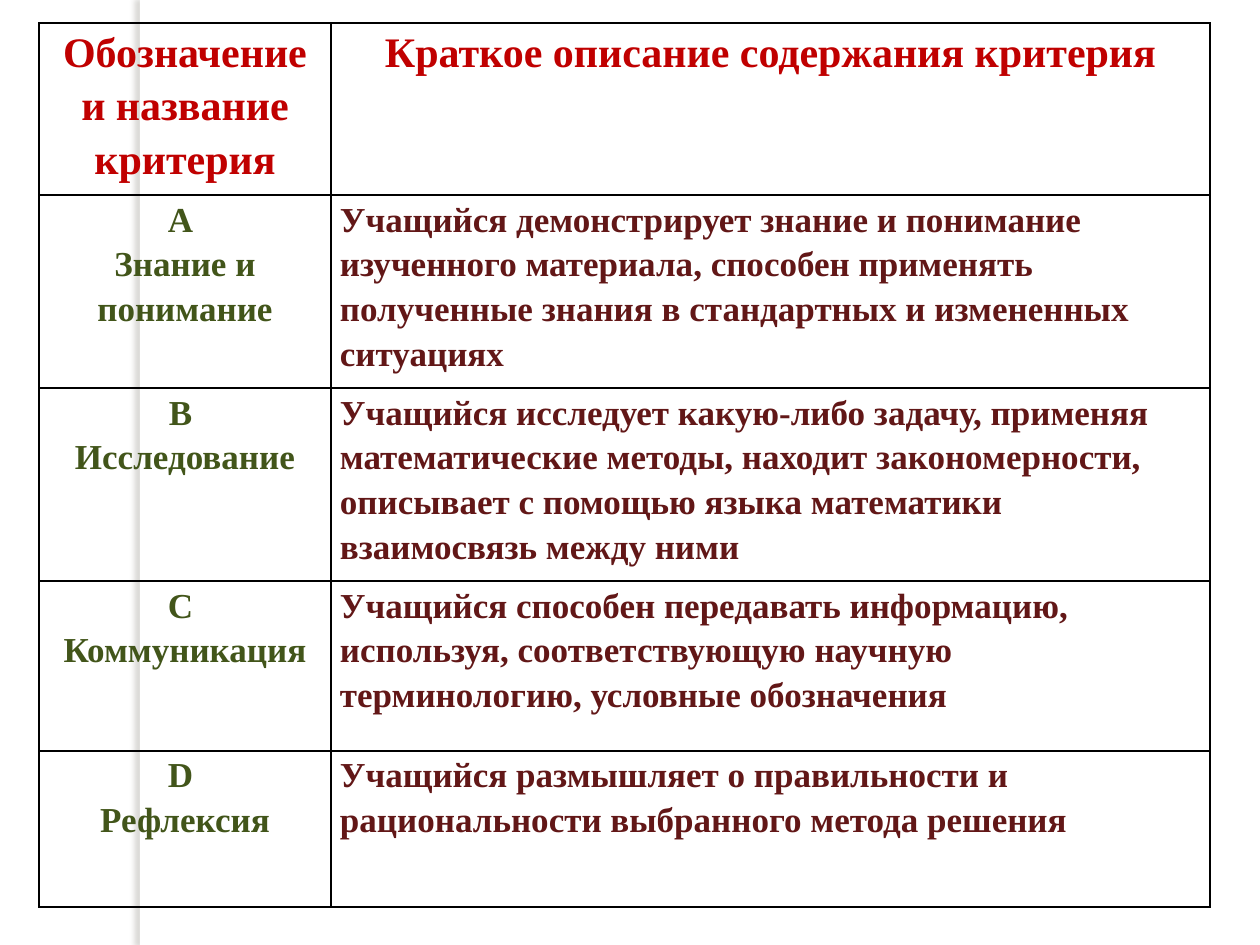
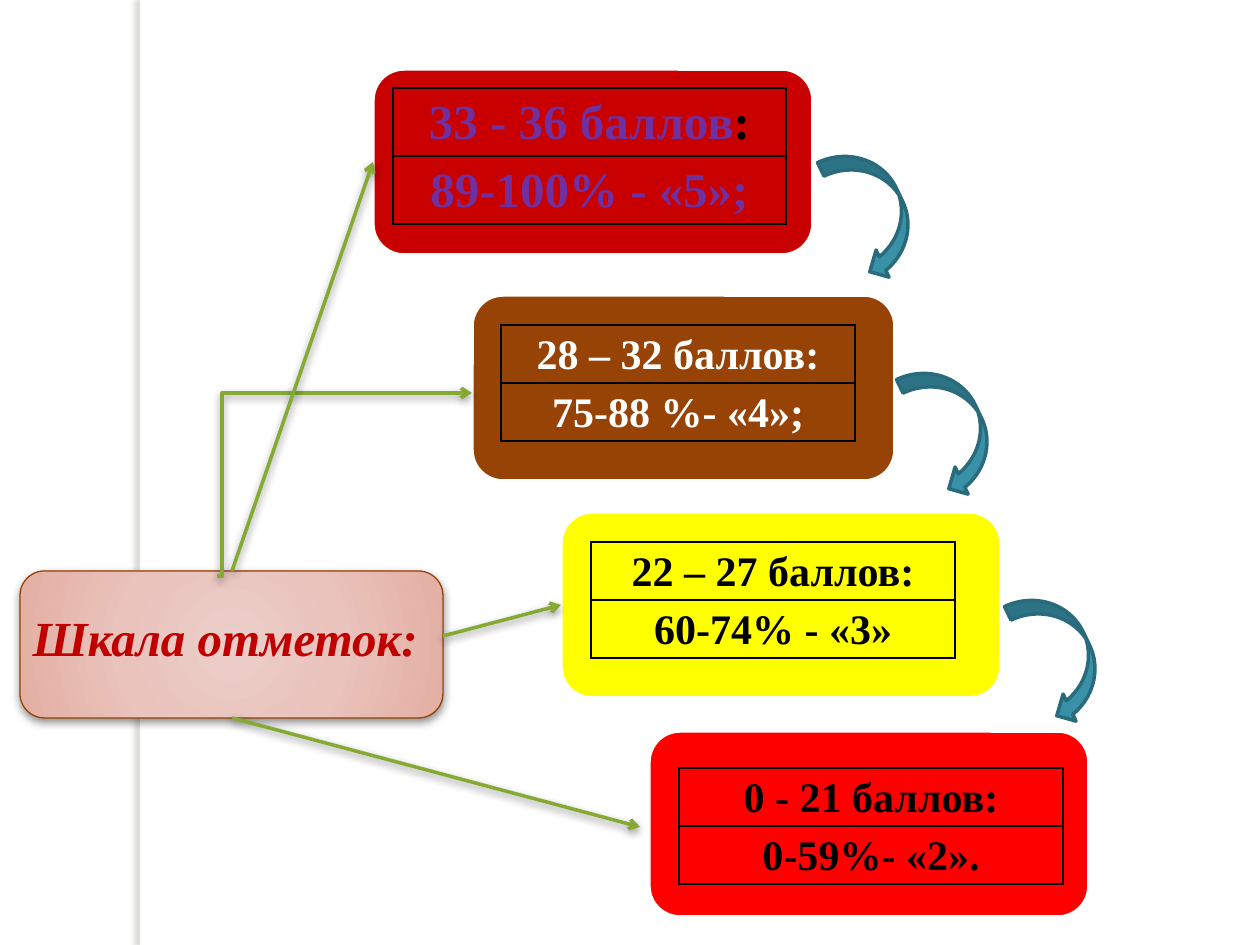
"""Build two slides: assessment criteria and the marking scale."""
from pptx import Presentation
from pptx import util as u
from pptx.dml import color
from pptx.enum import shapes, text
from pptx.oxml import parse_xml
from pptx.oxml.ns import nsdecls

PX = 7257
FONT = "Times New Roman"
CRIMSON, GREEN, MAROON = "C00000", "42551A", "621717"
WHITE, BLACK, VIOLET, BROWN = "FFFFFF", "000000", "7030A0", "964305"
TEAL, DARK_TEAL, ARROW_GREEN = "3891A7", "296B7C", "84AA33"
LEFT, CENTER = text.PP_ALIGN.LEFT, text.PP_ALIGN.CENTER
ROUNDED = shapes.MSO_SHAPE.ROUNDED_RECTANGLE
SOFT_DROP = (BLACK, 43, 5, 2, 90)


def paint(target, value):
    target.rgb = color.RGBColor.from_string(value)


def write(frame, *runs, size, align=CENTER, spacing=1.15, italic=False):
    paragraph = frame.paragraphs[0]
    paragraph.alignment, paragraph.line_spacing = align, spacing
    for words, tint in runs:
        for index, line in enumerate(words.split("\n")):
            if index:
                paragraph.add_line_break()
            run = paragraph.add_run()
            run.text = line
            run.font.name, run.font.size = FONT, u.Pt(size)
            run.font.bold, run.font.italic = True, italic
            paint(run.font.color, tint)


prs = Presentation()
prs.slide_width, prs.slide_height = u.Inches(10), u.Inches(7.5)
criteria = prs.slides.add_slide(prs.slide_layouts[6])
scale = prs.slides.add_slide(prs.slide_layouts[5])
shadowed = []

side_band = criteria.shapes.add_shape(shapes.MSO_SHAPE.RECTANGLE, 140 * PX, 0, 10 * PX, 945 * PX)
side_band.fill.solid()
paint(side_band.fill.fore_color, WHITE)
side_band.line.fill.background()
side_band.element.nvSpPr.cNvPr.set("id", "90")
prs.slide_master.shapes.element.insert(2, side_band.element)
shadowed.append((side_band, ("736F63", 25, 3, 3, 180)))

heading_box = scale.shapes.add_shape(ROUNDED, 20 * PX, 571 * PX, 423 * PX, 147 * PX)
stops = [(0, "ECCEC9"), (50, "E9C3BC"), (97, "E4AFA4"), (100, "E4A89B")]
stop_xml = "".join(f'<a:gs pos="{pos * 1000}"><a:srgbClr val="{tint}"/></a:gs>' for pos, tint in stops)
heading_box.element.spPr.prstGeom.addnext(parse_xml(
    f'<a:gradFill {nsdecls("a")} rotWithShape="1"><a:gsLst>{stop_xml}</a:gsLst><a:path path="circle">'
    '<a:fillToRect l="50000" t="50000" r="50000" b="50000"/></a:path></a:gradFill>'))
paint(heading_box.line.color, BROWN)
heading_box.line.width = u.Pt(0.75)
shadowed.append((heading_box, SOFT_DROP))

heading = scale.shapes.title
heading.left, heading.top, heading.width, heading.height = 20 * PX, 601 * PX, 423 * PX, 72 * PX
heading.text_frame.word_wrap = True
heading.text_frame.vertical_anchor = text.MSO_ANCHOR.MIDDLE
write(heading.text_frame, ("Шкала отметок:", CRIMSON), size=28, align=LEFT, spacing=1.0, italic=True)
scale.shapes.element.append(heading.element)

grade_boxes = [(373, 69, 440, "C80000"), (472, 295, 423, BROWN),
               (561, 512, 440, "FFFF00"), (649, 731, 440, "FF0000")]
step_arrows = [(806, 181), (885, 398), (993, 625)]
solids = [(ROUNDED, x, y, w, 186, fill, WHITE, 0) for x, y, w, fill in grade_boxes]
solids += [(shapes.MSO_SHAPE.CURVED_DOWN_ARROW, x, y, 136, 60, TEAL, DARK_TEAL, 64.4)
           for x, y in step_arrows]
for kind, x, y, w, h, fill, edge, turn in solids:
    solid = scale.shapes.add_shape(kind, x * PX, y * PX, w * PX, h * PX)
    solid.shadow.inherit = False
    solid.rotation = turn
    solid.fill.solid()
    paint(solid.fill.fore_color, fill)
    paint(solid.line.color, edge)
    solid.line.width = u.Pt(2)

STRAIGHT, ELBOW = shapes.MSO_CONNECTOR.STRAIGHT, shapes.MSO_CONNECTOR.ELBOW
for kind, *ends in [(ELBOW, 217, 576, 472, 393), (STRAIGHT, 232, 571, 373, 162),
                    (STRAIGHT, 232, 718, 640, 827), (STRAIGHT, 443, 636, 561, 605)]:
    link = scale.shapes.add_connector(kind, *(end * PX for end in ends))
    paint(link.line.color, ARROW_GREEN)
    link.line.width = u.Pt(2)
    link.line._get_or_add_ln().append(parse_xml(f'<a:tailEnd {nsdecls("a")} type="arrow"/>'))
    if kind == ELBOW:
        guides = link.element.spPr.prstGeom.get_or_add_avLst()
        guides.append(parse_xml(f'<a:gd {nsdecls("a")} name="adj1" fmla="val 1900"/>'))
    shadowed.append((link, SOFT_DROP))

for caster, (tint, alpha, blur, distance, angle) in shadowed:
    caster.element.spPr.append(parse_xml(
        f'<a:effectLst {nsdecls("a")}><a:outerShdw blurRad="{u.Pt(blur)}" dist="{u.Pt(distance)}" '
        f'dir="{angle * 60000}" algn="ctr" rotWithShape="0"><a:srgbClr val="{tint}">'
        f'<a:alpha val="{alpha * 1000}"/></a:srgbClr></a:outerShdw></a:effectLst>'))

descriptions = [
    ("А \nЗнание и понимание",
     "Учащийся демонстрирует знание и понимание изученного материала, способен применять "
     "полученные знания в стандартных и измененных ситуациях"),
    ("В \nИсследование",
     "Учащийся исследует какую-либо задачу, применяя математические методы, находит "
     "закономерности, описывает с помощью языка математики взаимосвязь между ними"),
    ("С \nКоммуникация",
     "Учащийся способен передавать информацию, используя, соответствующую научную "
     "терминологию, условные обозначения"),
    ("D \nРефлексия",
     "Учащийся размышляет о правильности и рациональности выбранного метода решения"),
]
criteria_rows = [[([("Обозначение и название критерия", CRIMSON)], 24, CENTER),
                  ([("Краткое описание содержания критерия", CRIMSON)], 24, CENTER)]]
criteria_rows += [[([(label, GREEN)], 20, CENTER), ([(details, MAROON)], 20, LEFT)]
                  for label, details in descriptions]
grids = [(criteria, 39, 23, [292, 879], [172, 193, 193, 170, 156], criteria_rows)]

grades = [
    (393, 88, 393, 68, 28, [("33 - 36 баллов", VIOLET), (":", BLACK)], [("89-100% - «5»;", VIOLET)]),
    (501, 325, 354, 58, 24, [("28 – 32 баллов:", WHITE)], [("75-88 %- «4»;", WHITE)]),
    (591, 542, 364, 58, 24, [("22 – 27 баллов:", BLACK)], [("60-74% - «3»", BLACK)]),
    (679, 768, 384, 58, 24, [("0 - 21 баллов:", BLACK)], [("0-59%- «2».", BLACK)]),
]
for x, y, width, height, size, points, mark in grades:
    grids.append((scale, x, y, [width], [height] * 2,
                  [[(points, size, CENTER)], [(mark, size, CENTER)]]))

for slide, x, y, widths, heights, rows in grids:
    grid = slide.shapes.add_table(len(heights), len(widths), x * PX, y * PX,
                                  sum(widths) * PX, sum(heights) * PX).table
    grid.first_row = grid.horz_banding = False
    for column, width in zip(grid.columns, widths):
        column.width = width * PX
    for r, row in enumerate(rows):
        grid.rows[r].height = heights[r] * PX
        for c, (runs, size, align) in enumerate(row):
            cell = grid.cell(r, c)
            cell.margin_left = cell.margin_right = 9 * PX
            cell.margin_top = cell.margin_bottom = 0
            write(cell.text_frame, *runs, size=size, align=align)
            borders = cell._tc.get_or_add_tcPr()
            for side in ("lnL", "lnR", "lnT", "lnB"):
                borders.append(parse_xml(
                    f'<a:{side} {nsdecls("a")} w="12700"><a:solidFill><a:srgbClr val="{BLACK}"/>'
                    f'</a:solidFill></a:{side}>'))
            cell.fill.background()

prs.save("out.pptx")
